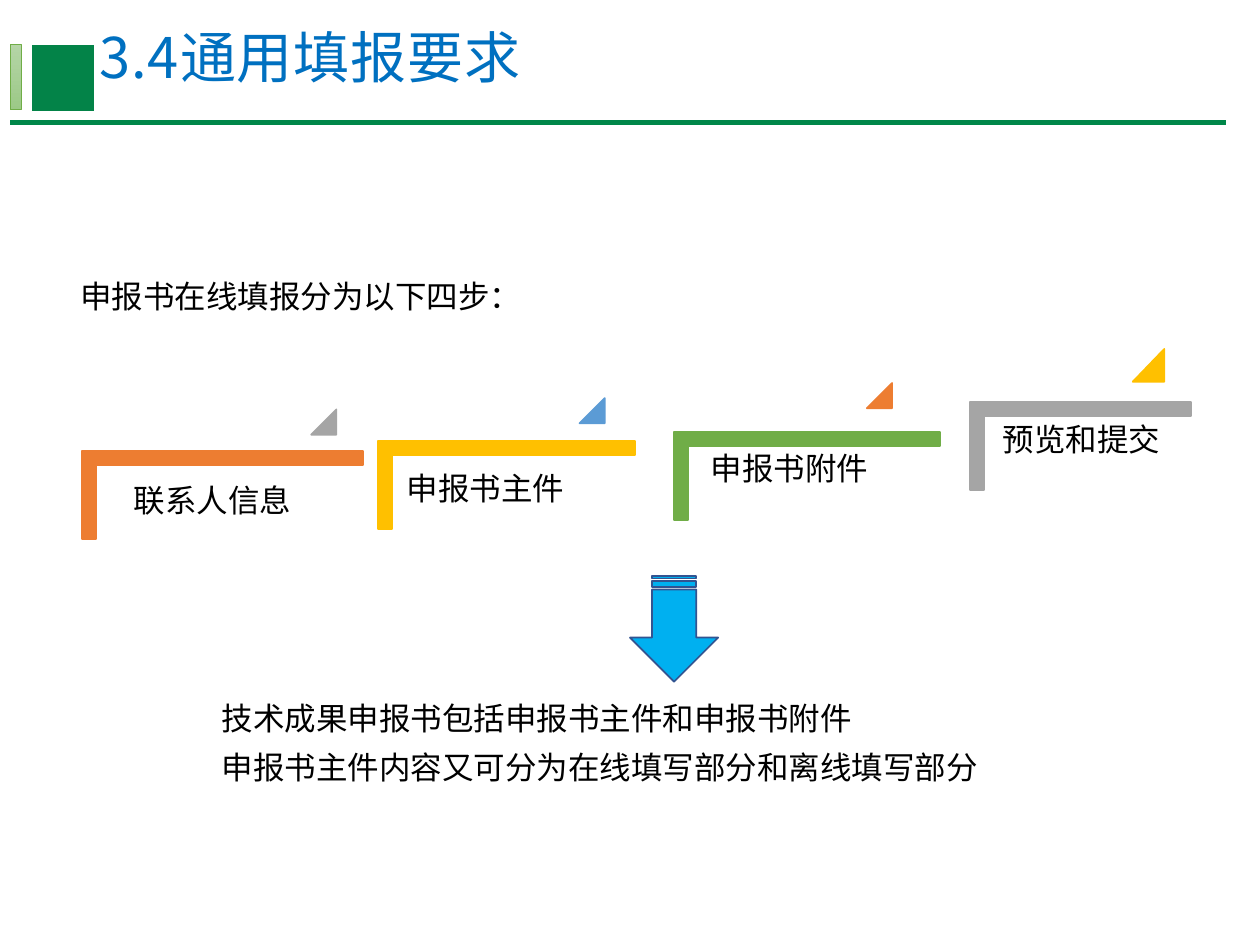
from dataclasses import dataclass

from pptx import Presentation
from pptx.dml.color import RGBColor
from pptx.enum.shapes import MSO_CONNECTOR, MSO_SHAPE as Preset
from pptx.enum.text import MSO_ANCHOR as Anchor, MSO_AUTO_SIZE as AutoSize, PP_ALIGN as Align
from pptx.oxml.ns import qn
from pptx.shapes.autoshape import Shape
from pptx.slide import Slide
from pptx.text.text import TextFrame
from pptx.util import Inches, Pt


@dataclass(frozen=True)
class Theme:
    font: str = "Noto Sans CJK SC"
    step_font: str = "Montserrat"
    title_size: int = 32
    body_size: int = 18
    black: str = "000000"
    white: str = "FFFFFF"
    title_blue: str = "0070C0"
    rule_green: str = "008749"
    block_green: str = "038348"
    light_green: str = "B5D5A7"
    soft_green: str = "9CC987"
    green: str = "70AD47"
    orange: str = "ED7D31"
    gold: str = "FFC000"
    blue: str = "5B9BD5"
    gray: str = "A5A5A5"
    arrow_blue: str = "00B0F0"
    arrow_edge: str = "325491"


@dataclass(frozen=True)
class Box:
    left: float
    top: float
    width: float
    height: float

    def lengths(self) -> list[int]:
        return [Inches(value) for value in (self.left, self.top, self.width, self.height)]


@dataclass(frozen=True)
class Step:
    label: str
    top: float
    length: float
    color: str
    label_box: Box
    marker_box: Box
    marker_color: str


THEME = Theme()
STEP_LEFT = 0.65
STEP_PITCH = 2.35
BRACKET_HEIGHT = 0.7
STEPS = [
    Step("联系人信息", 3.58, 2.23, THEME.orange,
         Box(0.99, 3.78, 1.54, 0.43), Box(2.47, 3.25, 0.2, 0.2), THEME.gray),
    Step("申报书主件", 3.5, 2.04, THEME.gold,
         Box(3.16, 3.69, 1.8, 0.43), Box(4.6, 3.16, 0.2, 0.2), THEME.blue),
    Step("申报书附件", 3.43, 2.11, THEME.green,
         Box(5.57, 3.53, 1.5, 0.28), Box(6.88, 3.04, 0.2, 0.2), THEME.orange),
    Step("预览和提交", 3.19, 1.75, THEME.gray,
         Box(7.89, 3.3, 1.49, 0.92), Box(8.99, 2.77, 0.25, 0.26), THEME.gold),
]


def color(value: str) -> RGBColor:
    return RGBColor.from_string(value)


def format_text(frame: TextFrame, text: str, size: int, text_color: str,
                font: str = THEME.font, spacing: float = 1.0) -> None:
    frame.text = text
    frame.word_wrap = True
    frame.vertical_anchor = Anchor.TOP
    for paragraph in frame.paragraphs:
        paragraph.alignment = Align.LEFT
        paragraph.line_spacing = spacing
        for run in paragraph.runs:
            run.font.name = font
            run.font.size = Pt(size)
            run.font.color.rgb = color(text_color)
            properties = run.font._element
            east_asian = properties.makeelement(qn("a:ea"), {"typeface": THEME.font})
            properties.find(qn("a:latin")).addnext(east_asian)


def add_text(slide: Slide, box: Box, text: str, spacing: float = 1.0) -> None:
    frame = slide.shapes.add_textbox(*box.lengths()).text_frame
    format_text(frame, text, THEME.body_size, THEME.black, spacing=spacing)
    frame.auto_size = AutoSize.SHAPE_TO_FIT_TEXT


def add_shape(slide: Slide, preset: Preset, box: Box, fill: str, line: str,
              line_width: float = 1) -> Shape:
    shape = slide.shapes.add_shape(preset, *box.lengths())
    shape.shadow.inherit = False
    shape.fill.solid()
    shape.fill.fore_color.rgb = color(fill)
    shape.line.color.rgb = color(line)
    shape.line.width = Pt(line_width)
    return shape


def add_upright(slide: Slide, preset: Preset, visible: Box, fill: str, line: str) -> Shape:
    offset = (visible.width - visible.height) / 2
    box = Box(visible.left + offset, visible.top - offset, visible.height, visible.width)
    shape = add_shape(slide, preset, box, fill, line)
    shape.rotation = 90
    return shape


def add_step(slide: Slide, index: int, step: Step) -> None:
    frame_box = Box(STEP_LEFT + index * STEP_PITCH, step.top, step.length, BRACKET_HEIGHT)
    bracket = add_upright(slide, Preset.CORNER, frame_box, step.color, step.color)
    bracket.adjustments[0] = bracket.adjustments[1] = 0.16

    frame = slide.shapes.add_textbox(*step.label_box.lengths()).text_frame
    format_text(frame, step.label, THEME.body_size, THEME.black, THEME.step_font, 0.9)
    frame.margin_left = frame.margin_right = Inches(0.07)
    frame.margin_top = frame.margin_bottom = Inches(0.07)

    marker = add_shape(slide, Preset.ISOSCELES_TRIANGLE, step.marker_box,
                       step.marker_color, step.marker_color)
    marker.adjustments[0] = 1


def add_header(slide: Slide) -> None:
    rule = slide.shapes.add_connector(
        MSO_CONNECTOR.STRAIGHT, Inches(0.08), Inches(0.97), Inches(9.73), Inches(0.97))
    rule.line.color.rgb = color(THEME.rule_green)
    rule.line.width = Pt(3)
    properties = rule._element.spPr
    properties.append(properties.makeelement(qn("a:effectLst"), {}))

    add_shape(slide, Preset.RECTANGLE, Box(0.24, 0.35, 0.52, 0.54),
              THEME.block_green, THEME.white, 1.5)
    bar = add_shape(slide, Preset.RECTANGLE, Box(0.08, 0.35, 0.09, 0.52),
                    THEME.light_green, THEME.green, 0.5)
    bar.fill.gradient()
    bar.fill.gradient_angle = 270
    for stop, value in zip(bar.fill.gradient_stops, (THEME.light_green, THEME.soft_green)):
        stop.color.rgb = color(value)

    title = slide.shapes.title
    title.left, title.top, title.width, title.height = Box(0.69, 0.24, 8.62, 0.43).lengths()
    frame = title.text_frame
    format_text(frame, "3.4通用填报要求", THEME.title_size, THEME.title_blue, spacing=0.9)
    frame.auto_size = AutoSize.NONE
    frame.margin_top = 0
    frame.paragraphs[0].runs[0].font._element.set("spc", "50")


def main() -> None:
    presentation = Presentation()
    presentation.slide_width = Inches(10)
    presentation.slide_height = Inches(7.5)
    slide = presentation.slides.add_slide(presentation.slide_layouts[5])

    add_header(slide)
    for index, step in enumerate(STEPS):
        add_step(slide, index, step)
    add_text(slide, Box(0.54, 2.15, 5, 0.4), "申报书在线填报分为以下四步：")
    add_text(slide, Box(1.66, 5.41, 6.79, 0.85),
             "技术成果申报书包括申报书主件和申报书附件\n"
             "申报书主件内容又可分为在线填写部分和离线填写部分", 1.3)
    add_upright(slide, Preset.STRIPED_RIGHT_ARROW, Box(5, 4.57, 0.7, 0.84),
                THEME.arrow_blue, THEME.arrow_edge)

    presentation.save("out.pptx")


if __name__ == "__main__":
    main()
